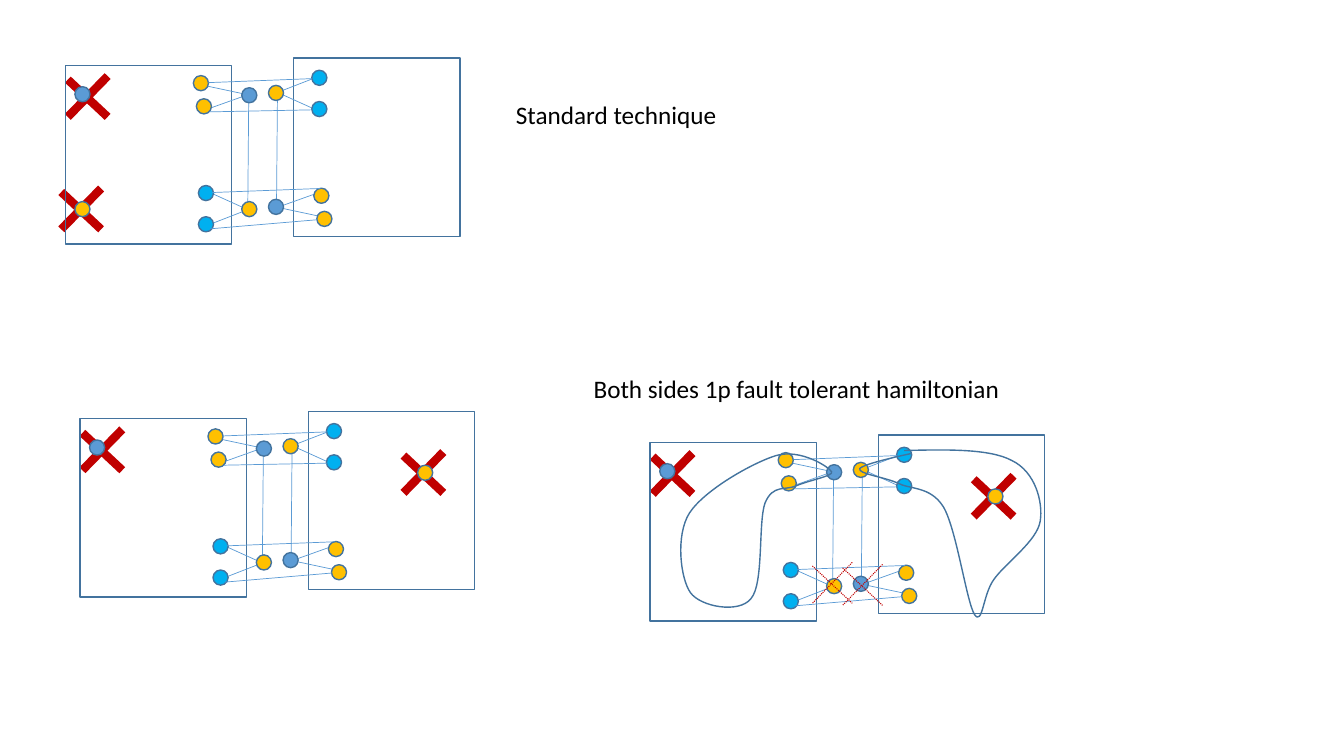
import itertools
from dataclasses import dataclass

import lxml.etree
import pptx
import pptx.dml.color
import pptx.enum.dml
import pptx.enum.shapes
import pptx.enum.text
import pptx.oxml.ns
import pptx.util

COLUMNS, ROWS = 133.33, 75
CELL = pptx.util.Inches(0.1)
DOT = 1.5
BOX = (16.5, 17.7)
TURN = (39.15, 16.97)
CROSS = (3.95, 4.05)
CROSS_DROP = 0.35

OUTLINE, EDGE, RED = "43739E", "5B9BD5", "C00000"
BLUE, GOLD, SKY = "5B9BD5", "FFC000", "00B0F0"

SHAPE = pptx.enum.shapes.MSO_SHAPE
qn = pptx.oxml.ns.qn


@dataclass(frozen=True)
class Dot:
    x: float
    y: float
    color: str


@dataclass(frozen=True)
class Edge:
    x1: float
    y1: float
    x2: float
    y2: float


@dataclass(frozen=True)
class Fault:
    cross_x: float
    cross_y: float
    dot: Dot


@dataclass(frozen=True)
class Panel:
    x: float
    y: float
    faults: tuple
    removed: tuple = ()


@dataclass(frozen=True)
class Curve:
    points: tuple
    closed: bool


@dataclass(frozen=True)
class Label:
    text: str
    x: float
    y: float
    width: float


HALF_EDGES = (
    Edge(18.2, 2.9, 18.1, 14.3),
    Edge(18.1, 2.9, 13.4, 1.9),
    Edge(18.1, 2.9, 13.9, 4.4),
    Edge(18.1, 14.3, 13.9, 12.4),
    Edge(18.1, 14.3, 14.5, 15.7),
)
HALF_DOTS = (
    Dot(17.5, 2.2, BLUE),
    Dot(17.5, 13.5, GOLD),
    Dot(13.2, 15, SKY),
    Dot(13.2, 11.9, SKY),
    Dot(13, 3.3, GOLD),
    Dot(12.7, 1, GOLD),
)
BRIDGES = (
    Edge(14.2, 1.7, 24.5, 1.3),
    Edge(14.3, 4.6, 24.5, 4.4),
    Edge(14.6, 12.6, 25.3, 12.2),
    Edge(14.4, 16.2, 25, 15.3),
)
BLUE_FAULT = Fault(0.25, 1.05, Dot(0.95, 2.1, BLUE))
FAR_FAULT = Fault(32.1, 3.3, Dot(33.5, 4.6, GOLD))
NEAR_FAULT = Fault(-0.4, 12.2, Dot(0.95, 13.5, GOLD))
PANELS = (
    Panel(6.48, 6.5, (NEAR_FAULT, BLUE_FAULT)),
    Panel(7.93, 41.55, (FAR_FAULT, BLUE_FAULT)),
    Panel(64.5, 43.9, (FAR_FAULT, BLUE_FAULT), ((16.1, 11.9), (19.1, 12.1))),
)
CURVES = (
    Curve((
        (77, 45.2), (74.7, 45.9), (69.9, 48.6), (68.4, 50.9),
        (67, 53.1), (67.5, 57.4), (68.5, 58.8),
        (69.5, 60.2), (73.3, 60.9), (74.5, 59.4),
        (75.8, 57.9), (75.2, 51.8), (75.9, 49.9),
        (76.7, 48), (77.9, 48.7), (79, 48.2),
        (80.1, 47.7), (82.8, 47.2), (82.5, 46.8),
        (82.2, 46.3), (79.4, 44.5), (77, 45.2),
    ), True),
    Curve((
        (89.7, 44.7), (93.9, 44.6), (98.2, 44.5), (100.4, 45.7),
        (102.7, 46.8), (103.5, 49.8), (103.2, 51.7),
        (102.9, 53.7), (99.7, 55.9), (98.6, 57.5),
        (97.5, 59), (97.5, 62.1), (96.7, 61),
        (95.9, 59.8), (94.9, 52.5), (93.6, 50.3),
        (92.3, 48.2), (90.3, 48.6), (89, 47.9),
        (87.6, 47.3), (85.1, 47), (85.3, 46.5),
        (85.6, 46), (90.4, 45), (90.4, 45),
    ), False),
)
LABELS = (
    Label("Standard technique", 50.2, 9.4, 67.8),
    Label("Both sides 1p fault tolerant hamiltonian", 57.9, 36.5, 44.8),
)


def cells(count: float) -> pptx.util.Emu:
    return pptx.util.Emu(round(count * CELL))


def rgb(color: str) -> pptx.dml.color.RGBColor:
    return pptx.dml.color.RGBColor.from_string(color)


def turned(x: float, y: float, w: float = 0, h: float = 0) -> tuple:
    return TURN[0] - x - w, TURN[1] - y - h


def style(sp, fill: str = "") -> None:
    sp.shadow.inherit = False
    if fill:
        sp.fill.solid()
        sp.fill.fore_color.rgb = rgb(fill)
    else:
        sp.fill.background()
    sp.line.color.rgb = rgb(OUTLINE)
    sp.line.width = pptx.util.Pt(1)


def add_preset(shapes, kind, x: float, y: float, w: float, h: float, fill: str = "") -> None:
    style(shapes.add_shape(kind, *map(cells, (x, y, w, h))), fill)


def add_line(shapes, x1: float, y1: float, x2: float, y2: float,
             color: str = EDGE, width: float = 0.5, dash=None) -> None:
    line = shapes.add_connector(pptx.enum.shapes.MSO_CONNECTOR.STRAIGHT,
                                *map(cells, (x1, y1, x2, y2)))
    line.line.color.rgb = rgb(color)
    line.line.width = pptx.util.Pt(width)
    if dash:
        line.line.dash_style = dash
    lxml.etree.SubElement(line.element.spPr, qn("a:effectLst"))


def add_cross(shapes, x: float, y: float, width: float, dash=None) -> None:
    right, bottom = x + CROSS[0], y + CROSS[1]
    add_line(shapes, x, y + CROSS_DROP, right, bottom, RED, width, dash)
    add_line(shapes, right, y, x, bottom, RED, width, dash)


def add_half(shapes, panel: Panel, rotate: bool) -> None:
    def place(x: float, y: float, w: float = 0, h: float = 0) -> tuple:
        px, py = turned(x, y, w, h) if rotate else (x, y)
        return panel.x + px, panel.y + py

    add_preset(shapes, SHAPE.RECTANGLE, *place(0, 0, *BOX), *BOX)
    for e in HALF_EDGES:
        add_line(shapes, *place(e.x1, e.y1), *place(e.x2, e.y2))
    for d in HALF_DOTS:
        add_preset(shapes, SHAPE.OVAL, *place(d.x, d.y, DOT, DOT), DOT, DOT, d.color)


def add_panel(shapes, panel: Panel) -> None:
    for fault in panel.faults:
        add_cross(shapes, panel.x + fault.cross_x, panel.y + fault.cross_y, 6)
    for rotate in (False, True):
        add_half(shapes, panel, rotate)
    for e in BRIDGES:
        add_line(shapes, panel.x + e.x1, panel.y + e.y1, panel.x + e.x2, panel.y + e.y2)
    for d in (fault.dot for fault in panel.faults):
        add_preset(shapes, SHAPE.OVAL, panel.x + d.x, panel.y + d.y, DOT, DOT, d.color)
    for x, y in panel.removed:
        add_cross(shapes, panel.x + x, panel.y + y, 0.75, pptx.enum.dml.MSO_LINE.ROUND_DOT)


def add_curve(shapes, curve: Curve) -> None:
    start, *rest = [tuple(map(cells, point)) for point in curve.points]
    builder = shapes.build_freeform(*start)
    builder.add_line_segments(rest, close=curve.closed)
    sp = builder.convert_to_shape()
    style(sp)
    steps = iter(list(sp.element.iter(qn("a:lnTo"))))
    while triple := tuple(itertools.islice(steps, 3)):
        bezier, *others = triple
        bezier.tag = qn("a:cubicBezTo")
        for step in others:
            bezier.append(step[0])
            step.getparent().remove(step)


def add_text(shapes, text: str, *, x: float, y: float, width: float, height: float = 4,
             size: float = 18, font: str = "Calibri", color: str = "000000") -> None:
    tf = shapes.add_textbox(*map(cells, (x, y, width, height))).text_frame
    tf.word_wrap = True
    tf.auto_size = pptx.enum.text.MSO_AUTO_SIZE.SHAPE_TO_FIT_TEXT
    r = tf.paragraphs[0].add_run()
    r.text = text
    r.font.size = pptx.util.Pt(size)
    r.font.name = font
    r.font.color.rgb = rgb(color)


def main() -> None:
    prs = pptx.Presentation()
    prs.slide_width, prs.slide_height = cells(COLUMNS), cells(ROWS)
    s = prs.slides.add_slide(prs.slide_layouts[6])
    for panel in PANELS:
        add_panel(s.shapes.add_group_shape().shapes, panel)
    for curve in CURVES:
        add_curve(s.shapes, curve)
    for label in LABELS:
        add_text(s.shapes, label.text, x=label.x, y=label.y, width=label.width)
    prs.save("out.pptx")


if __name__ == "__main__":
    main()
